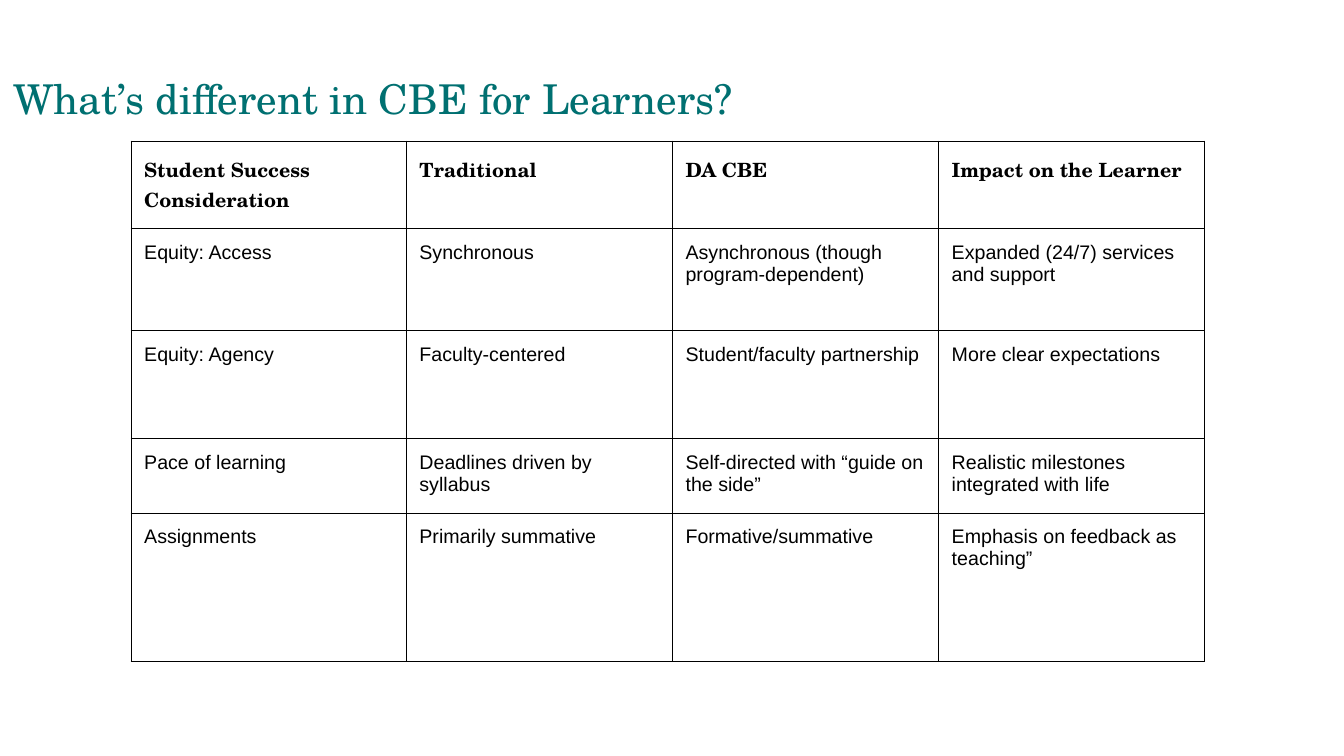
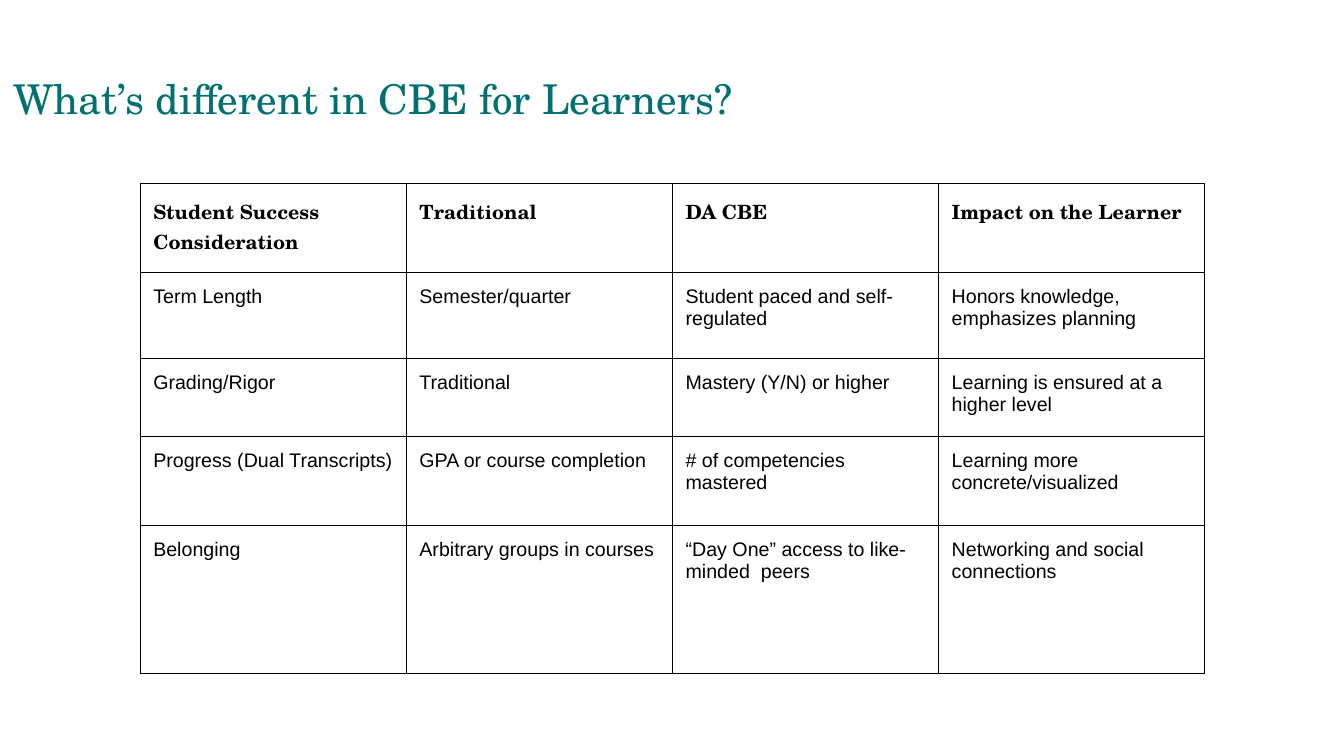
from lxml.etree import SubElement
from pptx import Presentation
from pptx.dml.color import RGBColor
from pptx.enum.text import MSO_ANCHOR
from pptx.oxml.ns import qn
from pptx.util import Inches, Pt

COLORS = {"title": "007071", "text": "000000", "border": "000000", "cell": "FFFFFF"}
FORMATS = {
    "title": {"name": "TeX Gyre Schola", "size": Pt(29.3), "bold": False},
    "header": {"name": "TeX Gyre Schola", "size": Pt(14), "bold": True},
    "body": {"name": "Arial", "size": Pt(14), "bold": False},
}
INSET = Inches(0.13)
MARGINS = {f"margin_{side}": INSET for side in ("left", "top", "right", "bottom")}
BORDER_WIDTH = Pt(0.75)
TITLE = "What’s different in CBE for Learners?"
HEADER = ["Student Success Consideration", "Traditional", "DA CBE", "Impact on the Learner"]

COMPARISONS = [
    {
        "position": (1.3, 1.4),
        "widths": [2.73, 2.64, 2.64, 2.64],
        "heights": [0.87, 1.01, 1.07, 0.74, 1.47],
        "rows": [
            ["Equity: Access", "Synchronous", "Asynchronous (though program-dependent)",
             "Expanded (24/7) services and support"],
            ["Equity: Agency", "Faculty-centered", "Student/faculty partnership",
             "More clear expectations"],
            ["Pace of learning", "Deadlines driven by syllabus",
             "Self-directed with “guide on the side”",
             "Realistic milestones integrated with life"],
            ["Assignments", "Primarily summative", "Formative/summative",
             "Emphasis on feedback as teaching”"],
        ],
    },
    {
        "position": (1.39, 1.82),
        "widths": [2.64] * 4,
        "heights": [0.88, 0.86, 0.77, 0.88, 1.47],
        "rows": [
            ["Term Length", "Semester/quarter", "Student paced and self-regulated",
             "Honors knowledge, emphasizes planning"],
            ["Grading/Rigor", "Traditional", "Mastery (Y/N) or higher",
             "Learning is ensured at a higher level"],
            ["Progress (Dual Transcripts)", "GPA or course completion",
             "# of competencies mastered", "Learning more concrete/visualized"],
            ["Belonging", "Arbitrary groups in courses",
             "“Day One” access to like-minded  peers",
             "Networking and social connections"],
        ],
    },
]


def apply(target, values):
    """Set every attribute in values on the target."""
    for name, value in values.items():
        setattr(target, name, value)


class Deck:
    """Hold the presentation, its shared style and the current slide."""

    def __init__(self):
        """Start an empty widescreen presentation."""
        self.presentation = Presentation()
        apply(self.presentation, {"slide_width": Inches(13.33), "slide_height": Inches(7.5)})
        self.slide = None

    def add_slide(self):
        """Add a blank slide and make it current."""
        self.slide = self.presentation.slides.add_slide(self.presentation.slide_layouts[6])

    def add_text(self, paragraph, text, style, color):
        """Add styled text to a paragraph."""
        run = paragraph.add_run()
        run.text = text
        apply(run.font, FORMATS[style])
        run.font.color.rgb = RGBColor.from_string(COLORS[color])

    def add_title(self, text):
        """Add the slide title."""
        shape = self.slide.shapes.add_textbox(0, Inches(0.65), Inches(12.42), Inches(0.84))
        frame = shape.text_frame
        apply(frame, {**MARGINS, "word_wrap": True, "vertical_anchor": MSO_ANCHOR.TOP})
        paragraph = frame.paragraphs[0]
        paragraph.line_spacing = 0.9
        self.add_text(paragraph, text, "title", "title")

    def add_borders(self, cell):
        """Draw a thin line on all four sides of a cell."""
        properties = cell._tc.get_or_add_tcPr()
        for side in ("L", "R", "T", "B"):
            line = SubElement(properties, qn(f"a:ln{side}"), w=str(int(BORDER_WIDTH)))
            fill = SubElement(line, qn("a:solidFill"))
            SubElement(fill, qn("a:srgbClr"), val=COLORS["border"])

    def add_cell(self, cell, text, style):
        """Style one table cell and add its text."""
        apply(cell, {**MARGINS, "vertical_anchor": MSO_ANCHOR.TOP})
        self.add_borders(cell)
        cell.fill.solid()
        cell.fill.fore_color.rgb = RGBColor.from_string(COLORS["cell"])
        self.add_text(cell.text_frame.paragraphs[0], text, style, "text")

    def add_table(self, position, widths, heights, rows):
        """Add a bordered table below the shared header row."""
        left, top = map(Inches, position)
        table = self.slide.shapes.add_table(
            len(heights), len(widths), left, top, Inches(sum(widths)), Inches(sum(heights))
        ).table
        apply(table, {"first_row": False, "horz_banding": False})
        for column, width in zip(table.columns, widths):
            column.width = Inches(width)
        for index, (row, height, texts) in enumerate(zip(table.rows, heights, [HEADER, *rows])):
            row.height = Inches(height)
            for cell, text in zip(row.cells, texts):
                self.add_cell(cell, text, "body" if index else "header")


def main():
    """Build the comparison slides and save them."""
    deck = Deck()
    for comparison in COMPARISONS:
        deck.add_slide()
        deck.add_title(TITLE)
        deck.add_table(**comparison)
    deck.presentation.save("out.pptx")


if __name__ == "__main__":
    main()
